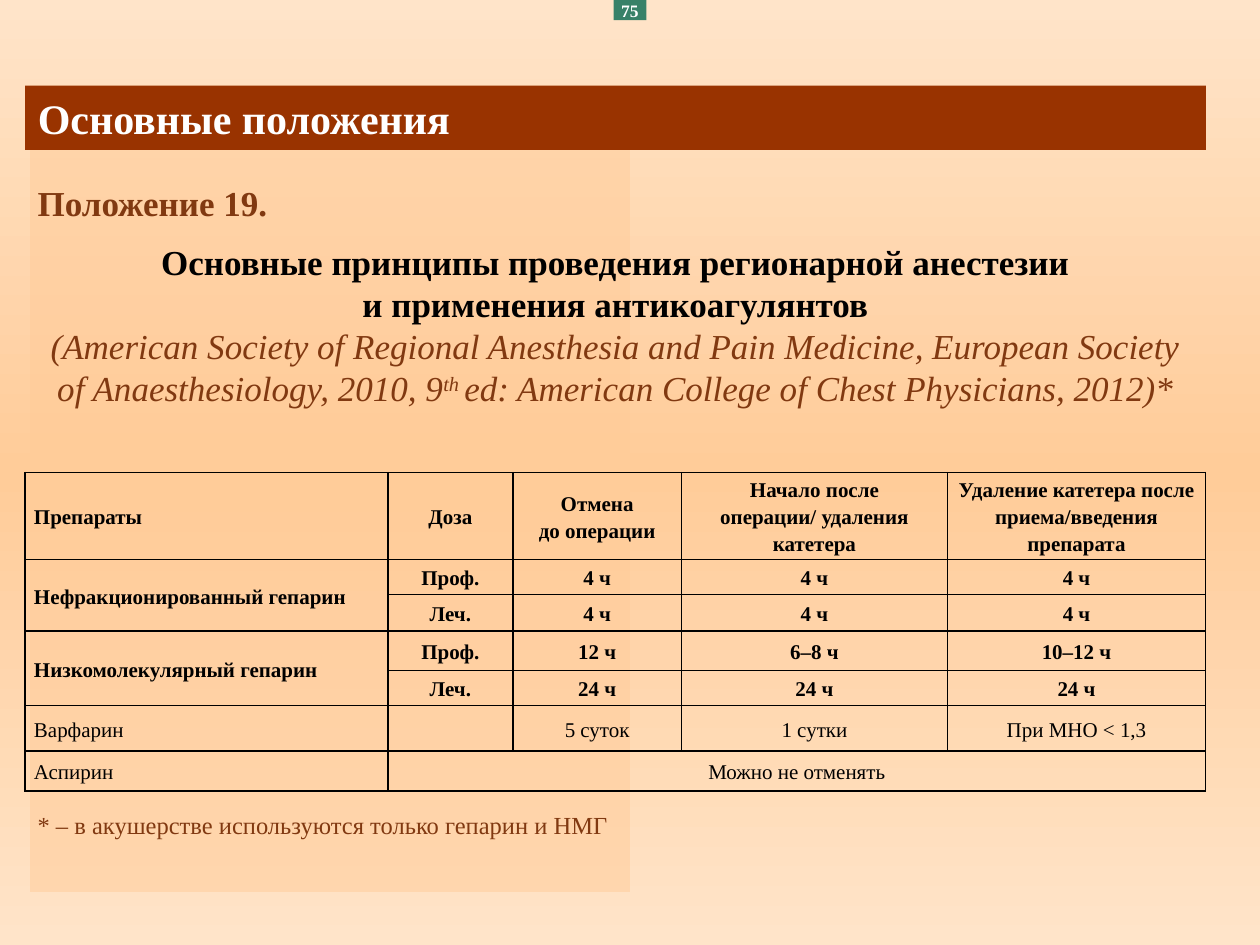
"""Build the slide on regional anaesthesia and anticoagulants."""
from copy import deepcopy

from lxml.etree import SubElement
from pptx import Presentation
from pptx.dml.color import RGBColor
from pptx.enum.shapes import MSO_SHAPE
from pptx.enum.text import MSO_ANCHOR, MSO_AUTO_SIZE, PP_ALIGN
from pptx.oxml.ns import qn
from pptx.util import Inches, Pt

COLORS = {
    "edge": "FFE4C9", "middle": "FFCC99", "number": "00664D", "band": "993300",
    "accent": "813911", "black": "000000", "white": "FFFFFF",
}
FONT = "Times New Roman"
LEFT, WIDTH = 0.2, 9.37
TITLE = "Основные положения"
NUMBER = "75"
STATEMENT = "Положение 19."
PRINCIPLES = "Основные принципы проведения регионарной анестезии\nи применения антикоагулянтов\n"
SOURCE = [
    ("(American Society of Regional Anesthesia and Pain Medicine, "
     "European Society of Anaesthesiology, 2010, 9", False),
    ("th ", True),
    ("ed: American College of Chest Physicians, 2012)*", False),
]
FOOTNOTE = "* – в акушерстве используются только гепарин и НМГ"
ROWS = [
    ["Препараты", "Доза", "Отмена\nдо операции", "Начало после\nоперации/ удаления катетера",
     "Удаление катетера после приема/введения препарата"],
    ["Нефракционированный гепарин", "Проф.", "4 ч", "4 ч", "4 ч"],
    ["", "Леч.", "4 ч", "4 ч", "4 ч"],
    ["Низкомолекулярный гепарин", "Проф.", "12 ч", "6–8 ч", "10–12 ч"],
    ["", "Леч.", "24 ч", "24 ч", "24 ч"],
    ["Варфарин", "", "5 суток", "1 сутки", "При МНО < 1,3"],
    ["Аспирин", "Можно не отменять", "", "", ""],
]
BOLD_ROWS = 5
MERGES = [((1, 0), (2, 0)), ((3, 0), (4, 0)), ((6, 1), (6, 4))]
COLUMN_WIDTHS = [2.88, 0.99, 1.34, 2.11, 2.05]
ROW_HEIGHTS = [0.69, 0.28, 0.29, 0.31, 0.28, 0.36, 0.32]


def color(name):
    """Return the named colour."""
    return RGBColor.from_string(COLORS[name])


def write(paragraph, text, size, fill="black", bold=False, italic=False,
          raised=False, align=PP_ALIGN.LEFT):
    """Add formatted text to a paragraph, with a line break at each newline."""
    paragraph.alignment = align
    for index, line in enumerate(text.split("\n")):
        if index:
            paragraph.add_line_break()
        if not line:
            continue
        run = paragraph.add_run()
        run.text = line
        font = run.font
        font.name, font.size, font.bold, font.italic = FONT, Pt(size), bold, italic
        font.color.rgb = color(fill)
        if raised:
            font._element.set("baseline", "30000")


def add_rectangle(slide, box, fill, opacity):
    """Add a translucent rectangle without outline or shadow."""
    shape = slide.shapes.add_shape(MSO_SHAPE.RECTANGLE, *map(Inches, box))
    shape.shadow.inherit = False
    shape.fill.solid()
    shape.fill.fore_color.rgb = color(fill)
    shape.line.fill.background()
    tint = shape.element.spPr.find(".//" + qn("a:srgbClr"))
    SubElement(tint, qn("a:alpha"), val=str(opacity * 1000))
    return shape


def add_text_frame(slide, box):
    """Add a wrapping text box and return its frame."""
    frame = slide.shapes.add_textbox(*map(Inches, box)).text_frame
    frame.word_wrap = True
    return frame


def set_background(slide):
    """Fill the background with a vertical gradient of three stops."""
    fill = slide.background.fill
    fill.gradient()
    fill.gradient_angle = 270
    stops = slide.element.find(".//" + qn("a:gsLst"))
    stops.insert(1, deepcopy(stops[0]))
    for stop, name, position in zip(fill.gradient_stops, ("edge", "middle", "edge"), (0, 0.5, 1)):
        stop.color.rgb = color(name)
        stop.position = position


def set_borders(cell):
    """Draw a thin black line on every side of a cell."""
    properties = cell._tc.get_or_add_tcPr()
    for index, side in enumerate(("lnL", "lnR", "lnT", "lnB")):
        line = SubElement(properties, qn(f"a:{side}"), w=str(Pt(1)))
        solid = SubElement(line, qn("a:solidFill"))
        SubElement(solid, qn("a:srgbClr"), val=COLORS["black"])
        properties.insert(index, line)


def add_drug_table(slide):
    """Add the table of drugs and intervals."""
    table = slide.shapes.add_table(
        len(ROWS), len(COLUMN_WIDTHS), Inches(LEFT), Inches(3.75),
        Inches(WIDTH), Inches(sum(ROW_HEIGHTS))).table
    table.first_row = table.horz_banding = False
    for column, width in zip(table.columns, COLUMN_WIDTHS):
        column.width = Inches(width)
    for row, height in zip(table.rows, ROW_HEIGHTS):
        row.height = Inches(height)
    for row_index, texts in enumerate(ROWS):
        for column_index, text in enumerate(texts):
            cell = table.cell(row_index, column_index)
            cell.fill.background()
            set_borders(cell)
            cell.vertical_anchor = MSO_ANCHOR.MIDDLE
            cell.margin_left = cell.margin_right = Inches(0.07)
            cell.margin_top = cell.margin_bottom = 0
            paragraph = cell.text_frame.paragraphs[0]
            paragraph.line_spacing = 1.15
            paragraph.font.size = Pt(12)
            write(paragraph, text, 12, bold=row_index < BOLD_ROWS,
                  align=PP_ALIGN.CENTER if column_index else PP_ALIGN.LEFT)
    for first, last in MERGES:
        table.cell(*first).merge(table.cell(*last))


def main():
    """Build and save the presentation."""
    presentation = Presentation()
    presentation.slide_width, presentation.slide_height = Inches(10), Inches(7.5)
    slide = presentation.slides.add_slide(presentation.slide_layouts[5])
    set_background(slide)

    title = slide.shapes.title
    panel = add_rectangle(slide, (0.24, 0.68, 4.76, 6.4), "middle", 50)
    title.element.addprevious(panel.element)
    title.left, title.top, title.width, title.height = map(Inches, (LEFT, 0.68, WIDTH, 0.51))
    title.fill.solid()
    title.fill.fore_color.rgb = color("band")
    title.text_frame.auto_size = MSO_AUTO_SIZE.NONE
    write(title.text_frame.paragraphs[0], TITLE, 24, fill="white", bold=True)

    number = add_rectangle(slide, (4.87, 0, 0.26, 0.16), "number", 78)
    number.text_frame.word_wrap = False
    number.text_frame.vertical_anchor = MSO_ANCHOR.MIDDLE
    write(number.text_frame.paragraphs[0], NUMBER, 10, fill="white", bold=True,
          align=PP_ALIGN.CENTER)

    frame = add_text_frame(slide, (LEFT, 1.39, WIDTH, 1.92))
    write(frame.paragraphs[0], STATEMENT, 20, fill="accent", bold=True)
    paragraph = frame.add_paragraph()
    paragraph.space_before = Pt(10)
    write(paragraph, PRINCIPLES, 20, bold=True, align=PP_ALIGN.CENTER)
    for text, raised in SOURCE:
        write(paragraph, text, 20, fill="accent", italic=True, raised=raised,
              align=PP_ALIGN.CENTER)

    add_drug_table(slide)
    footnote = add_text_frame(slide, (LEFT, 6.38, 7.56, 0.34))
    write(footnote.paragraphs[0], FOOTNOTE, 14, fill="accent")
    presentation.save("out.pptx")


if __name__ == "__main__":
    main()
